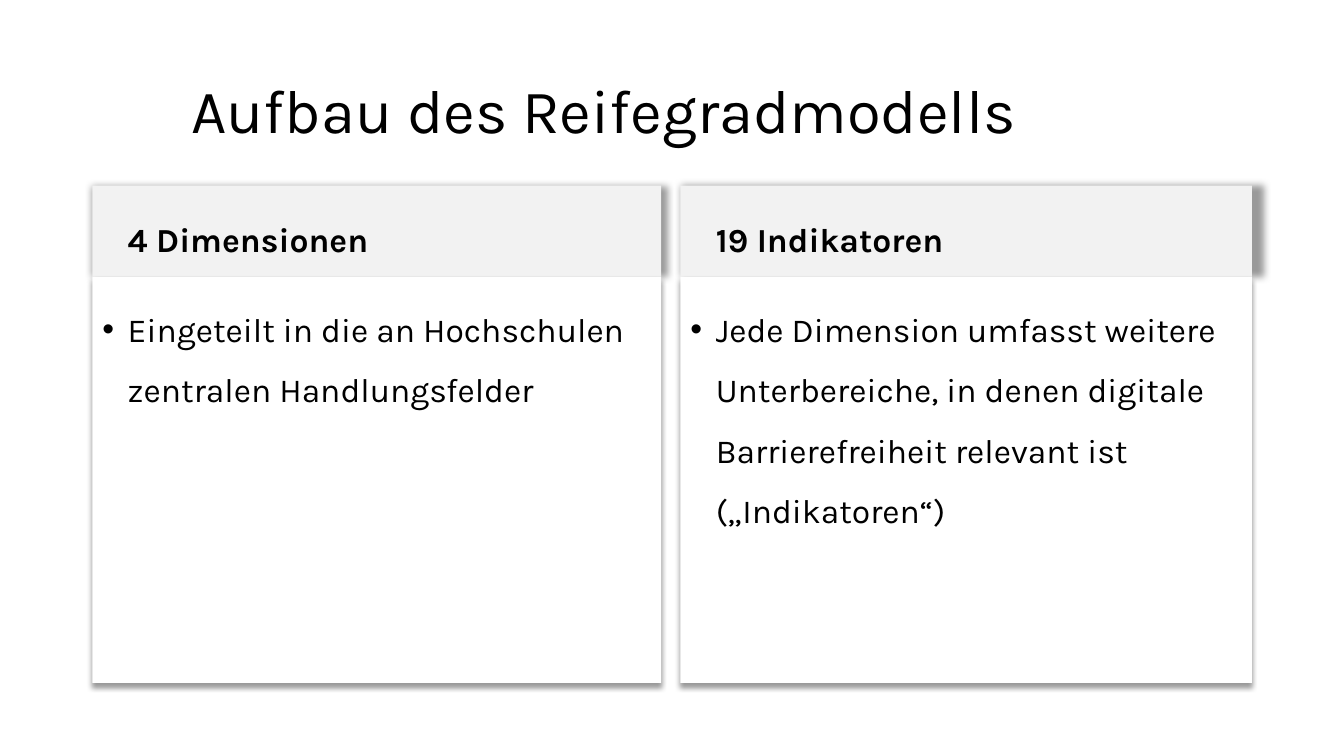
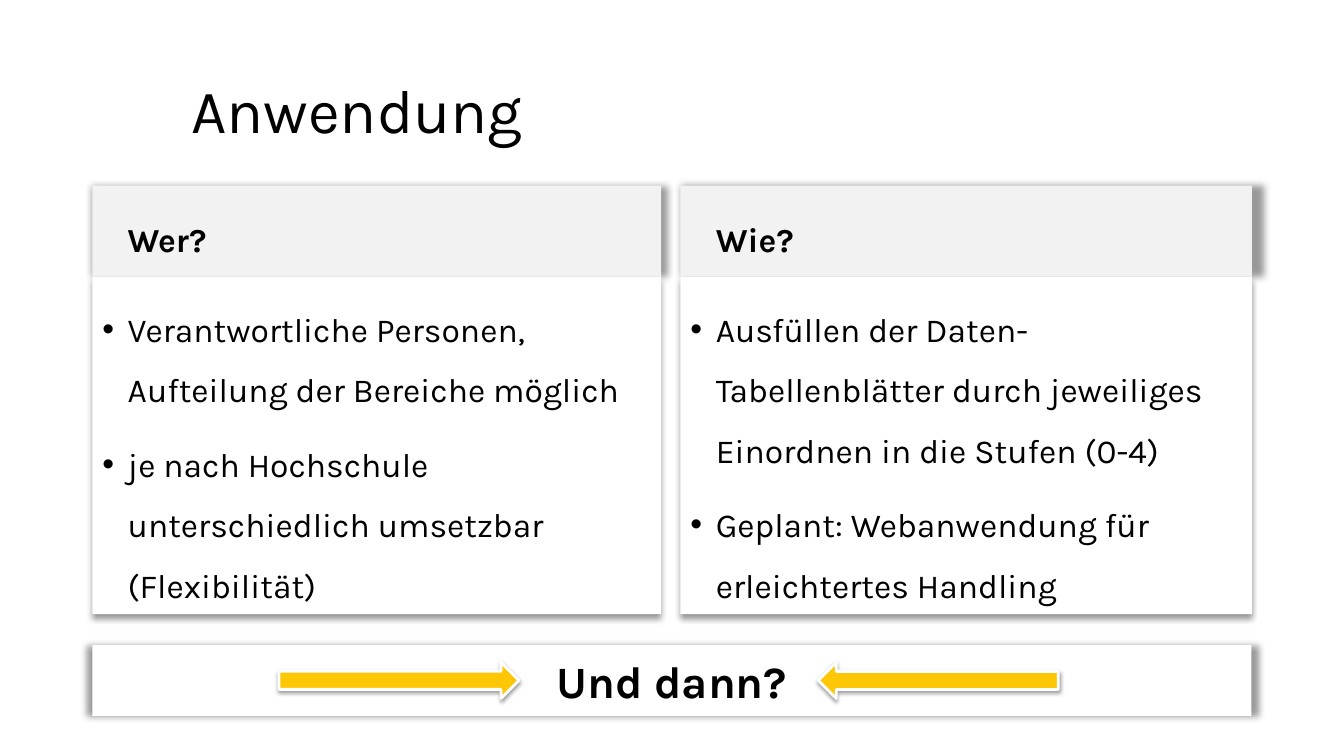
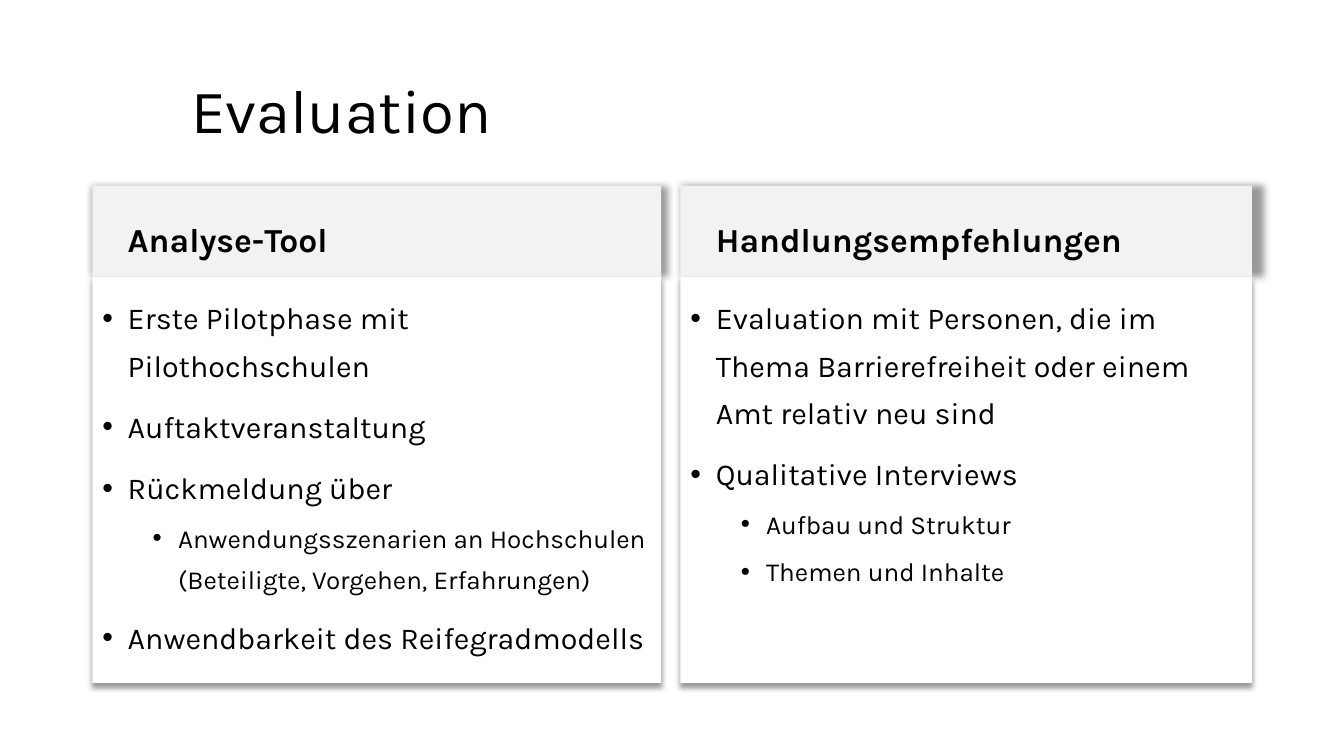
from lxml import etree
from pptx import Presentation
from pptx.dml.color import RGBColor
from pptx.enum.shapes import MSO_SHAPE
from pptx.enum.text import MSO_ANCHOR, PP_ALIGN
from pptx.oxml.ns import qn
from pptx.util import Cm, Pt

RECT, ARROW = MSO_SHAPE.RECTANGLE, MSO_SHAPE.RIGHT_ARROW
TOP, MIDDLE = MSO_ANCHOR.TOP, MSO_ANCHOR.MIDDLE
LEFT, CENTER = PP_ALIGN.LEFT, PP_ALIGN.CENTER

THEME = {
    "font": "Karla",
    "text": RGBColor(0x00, 0x00, 0x00),
    "head": RGBColor(0xF2, 0xF2, 0xF2),
    "panel": RGBColor(0xFF, 0xFF, 0xFF),
    "arrow": RGBColor(0xFE, 0xC7, 0x05),
    "title_size": 44,
    "head_size": 24,
    "band_size": 32,
    "body_sizes": (24, 20),
    "dense_sizes": (21.7, 18.6),
}

# Shadow: blur and distance in pt, direction in degrees, opacity and width in %
PANEL_SHADOW = {"blur": 4, "dist": 3, "dir": 90, "alpha": 40}
HEAD_SHADOW = {"blur": 5, "dist": 0, "dir": 0, "alpha": 40, "algn": "l"}
BAND_SHADOW = {"blur": 5, "dist": 0, "dir": 0, "alpha": 40, "width": 101}
ARROW_SHADOW = {"blur": 3.1, "dist": 1.6, "dir": 90, "alpha": 38}

# Insets in cm: left, top, right, bottom
TITLE_INSETS = (2.49, 0.13, 0.25, 0.13)
HEAD_INSETS = (0.89, 0, 0.25, 0.13)
BODY_INSETS = (0.25, 0.3, 0.25, 0.13)
BAND_INSETS = (0.25, 0.13, 0.25, 0.13)

MARGIN, CONTENT_W = 2.33, 29.21
HEAD_TOP, HEAD_H = 4.68, 2.29
BODY_TOP = HEAD_TOP + HEAD_H
INDENT, SUB_STEP = 0.64, 1.27
# Left, width and width of the header's shadow in %
COLUMNS = [(MARGIN, 14.33, 101), (17.15, 14.4, 102)]

# Each column holds a header and its bullets as (level, text)
SLIDES = [
    {
        "title": "Aufbau des Reifegradmodells",
        "body_h": 10.24, "sizes": THEME["body_sizes"], "spacing": 1.5,
        "columns": [
            ("4 Dimensionen", [
                (0, "Eingeteilt in die an Hochschulen zentralen Handlungsfelder"),
            ]),
            ("19 Indikatoren", [
                (0, "Jede Dimension umfasst weitere Unterbereiche, in denen "
                    "digitale Barrierefreiheit relevant ist („Indikatoren“)"),
            ]),
        ],
    },
    {
        "title": "Anwendung",
        "body_h": 8.51, "sizes": THEME["body_sizes"], "spacing": 1.5,
        "columns": [
            ("Wer?", [
                (0, "Verantwortliche Personen, Aufteilung der Bereiche möglich"),
                (0, "je nach Hochschule unterschiedlich umsetzbar (Flexibilität)"),
            ]),
            ("Wie?", [
                (0, "Ausfüllen der Daten-Tabellenblätter durch jeweiliges "
                    "Einordnen in die Stufen (0-4)"),
                (0, "Geplant: Webanwendung für erleichtertes Handling"),
            ]),
        ],
        "band": "Und dann?",
    },
    {
        "title": "Evaluation",
        "body_h": 10.24, "sizes": THEME["dense_sizes"], "spacing": 1.3,
        "columns": [
            ("Analyse-Tool", [
                (0, "Erste Pilotphase mit Pilothochschulen"),
                (0, "Auftaktveranstaltung"),
                (0, "Rückmeldung über"),
                (1, "Anwendungsszenarien an Hochschulen "
                    "(Beteiligte, Vorgehen, Erfahrungen)"),
                (0, "Anwendbarkeit des Reifegradmodells"),
            ]),
            ("Handlungsempfehlungen", [
                (0, "Evaluation mit Personen, die im Thema Barrierefreiheit "
                    "oder einem Amt relativ neu sind"),
                (0, "Qualitative Interviews"),
                (1, "Aufbau und Struktur"),
                (1, "Themen und Inhalte"),
            ]),
        ],
    },
]


def add_box(s, kind, at, fill, shadow):
    """Add a filled shape without outline that casts an outer shadow."""
    sp = s.shapes.add_shape(kind, *map(Cm, at))
    sp.fill.solid()
    sp.fill.fore_color.rgb = fill
    sp.line.fill.background()
    sp.shadow.inherit = False
    effects = sp._element.spPr.find(qn("a:effectLst"))
    outer = etree.SubElement(
        effects, qn("a:outerShdw"), blurRad=str(Pt(shadow["blur"])),
        dist=str(Pt(shadow["dist"])), dir=str(shadow["dir"] * 60000),
        sx=str(shadow.get("width", 100) * 1000),
        algn=shadow.get("algn", "ctr"), rotWithShape="0")
    color = etree.SubElement(outer, qn("a:srgbClr"), val=str(THEME["text"]))
    etree.SubElement(color, qn("a:alpha"), val=str(shadow["alpha"] * 1000))
    return sp


def write(sp, items, sizes, insets, anchor=MIDDLE, spacing=1.0, bold=False,
          align=LEFT, bullets=False):
    """Fill a shape with (level, text) paragraphs, sized by level."""
    tf = sp.text_frame
    frame = {"word_wrap": True, "vertical_anchor": anchor}
    sides = ("margin_left", "margin_top", "margin_right", "margin_bottom")
    frame.update(zip(sides, map(Cm, insets)))
    for name, value in frame.items():
        setattr(tf, name, value)
    for i, (level, text) in enumerate(items):
        p = tf.add_paragraph() if i else tf.paragraphs[0]
        if bullets:
            pPr = p._p.get_or_add_pPr()
            pPr.set("marL", str(Cm(INDENT + level * SUB_STEP)))
            pPr.set("indent", str(-Cm(INDENT)))
            etree.SubElement(pPr, qn("a:buFont"), typeface="Arial")
            etree.SubElement(pPr, qn("a:buChar"), char="•")
        layout = {"level": level, "alignment": align, "line_spacing": spacing,
                  "space_before": Pt((5 if level else 10) if i else 0)}
        for name, value in layout.items():
            setattr(p, name, value)
        r = p.add_run()
        r.text = text
        look = {"name": THEME["font"], "size": Pt(sizes[level]), "bold": bold}
        for name, value in look.items():
            setattr(r.font, name, value)
        r.font.color.rgb = THEME["text"]


prs = Presentation()
prs.slide_width, prs.slide_height = Cm(33.87), Cm(19.05)
blank = prs.slide_layouts[6]

for content in SLIDES:
    s = prs.slides.add_slide(blank)
    title = s.shapes.add_textbox(Cm(MARGIN), Cm(1.01), Cm(CONTENT_W), Cm(3.68))
    write(title, [(0, content["title"])], [THEME["title_size"]],
          TITLE_INSETS, spacing=0.9)

    for (x, w, shadow_w), (header, points) in zip(COLUMNS, content["columns"]):
        head = add_box(s, RECT, (x, HEAD_TOP, w, HEAD_H), THEME["head"],
                       {**HEAD_SHADOW, "width": shadow_w})
        write(head, [(0, header)], [THEME["head_size"]], HEAD_INSETS,
              spacing=1.5, bold=True)
        body = add_box(s, RECT, (x, BODY_TOP, w, content["body_h"]),
                       THEME["panel"], PANEL_SHADOW)
        write(body, points, content["sizes"], BODY_INSETS, anchor=TOP,
              spacing=content["spacing"], bullets=True)

    if "band" in content:
        band = add_box(s, RECT, (MARGIN, 16.26, CONTENT_W, 1.78),
                       THEME["panel"], BAND_SHADOW)
        write(band, [(0, content["band"])], [THEME["band_size"]], BAND_INSETS,
              bold=True, align=CENTER)
        for x, rotation in ((7.03, 0), (20.62, 180)):
            arrow = add_box(s, ARROW, (x, 16.69, 6.05, 0.91), THEME["arrow"],
                            ARROW_SHADOW)
            arrow.rotation = rotation
            arrow.line.color.rgb = THEME["panel"]
            arrow.line.width = Pt(2)

prs.save("out.pptx")
